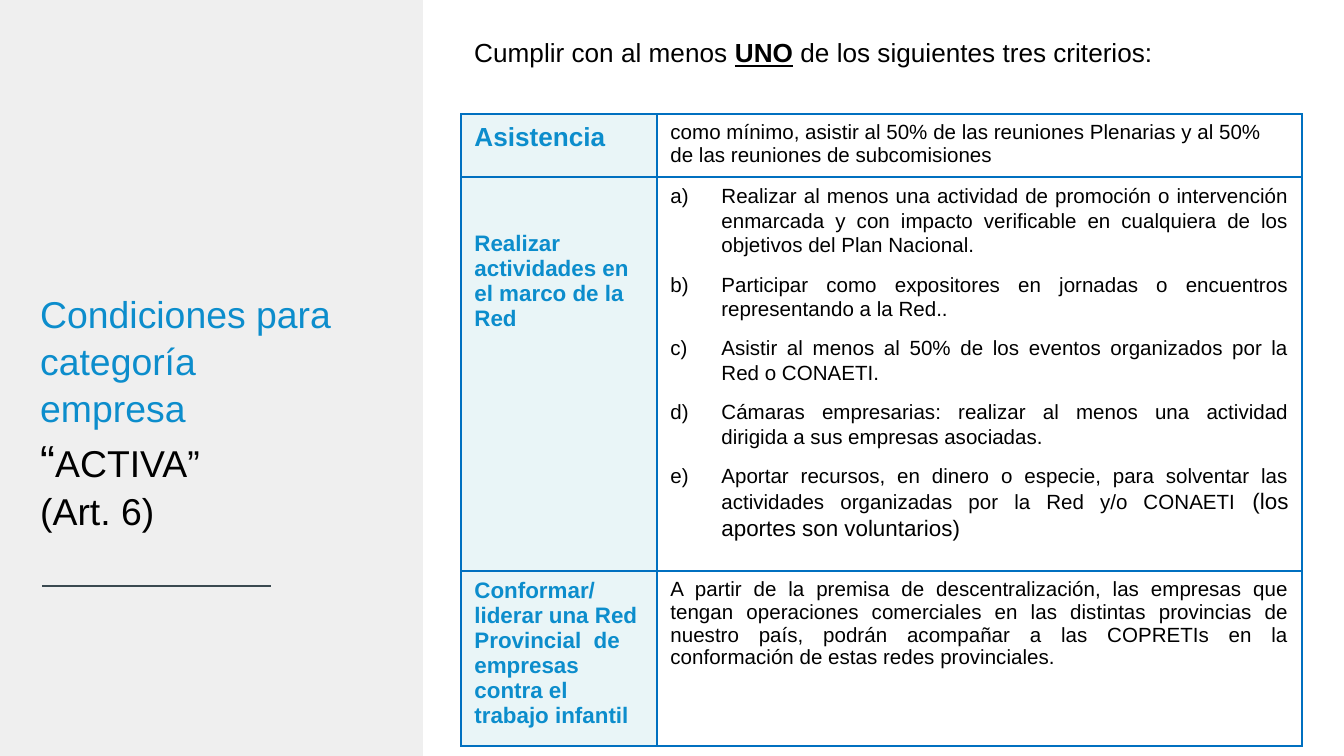
from lxml import etree
from pptx import Presentation
from pptx import util as u
from pptx.dml.color import RGBColor
from pptx.enum import shapes, text
from pptx.oxml.ns import qn

SCALE = 914400 / 134.4
W, H = 1344, 756
SIDE_W = 423
FONT = "Arial"
BLUE, BLACK, GRAY, SLATE = "0C8DCC", "000000", "EFEFEF", "3A4950"
PALE, WHITE, BORDER = "E9F5F7", "FFFFFF", "0070C0"
COLS = (196, 645)
ROWS = (63, 394, 175)
LABEL_TOP = 54

TITLE = [
    [("Condiciones para categoría empresa", 20, BLUE)],
    [("“", 24, BLACK), ("ACTIVA”", 20, BLACK)],
    [("(Art. 6)", 20, BLACK)],
]
LABELS = [
    ("Asistencia", 14),
    ("Realizar actividades en el marco de la Red", 12),
    ("Conformar/ liderar una Red Provincial  de empresas contra el trabajo infantil", 12),
]
ATTENDANCE = ("como mínimo, asistir al 50% de las reuniones Plenarias "
              "y al 50% de las reuniones de subcomisiones")
ACTIVITIES = [
    "Realizar al menos una actividad de promoción o intervención enmarcada "
    "y con impacto verificable en cualquiera de los objetivos del Plan Nacional.",
    "Participar como expositores en jornadas o encuentros representando a la Red..",
    "Asistir al menos al 50% de los eventos organizados por la Red o CONAETI.",
    "Cámaras empresarias: realizar al menos una actividad dirigida a sus empresas asociadas.",
    "Aportar recursos, en dinero o especie, para solventar las actividades "
    "organizadas por la Red y/o CONAETI",
]
VOLUNTARY = " (los aportes son voluntarios)"
NETWORKS = ("A partir de la premisa de descentralización, las empresas que tengan "
            "operaciones comerciales en las distintas provincias de nuestro país, podrán "
            "acompañar a las COPRETIs en la conformación de estas redes provinciales.")


def px(n):
    return u.Emu(round(n * SCALE))


def color(value):
    return RGBColor.from_string(value)


def style(font, size, value=BLACK, bold=False):
    font.name, font.size, font.bold = FONT, u.Pt(size), bold
    font.color.rgb = color(value)


def add_run(p, content):
    r = p.add_run()
    r.text = content
    return r


def next_paragraph(tf, i):
    return tf.add_paragraph() if i else tf.paragraphs[0]


def justify(p):
    p.alignment = text.PP_ALIGN.JUSTIFY


def loosen(p):
    p.line_spacing = 1.07
    p.space_after = u.Pt(8)


def add_text_frame(s, x, y, w, h):
    tf = s.shapes.add_textbox(px(x), px(y), px(w), px(h)).text_frame
    tf.word_wrap = True
    return tf


def add_side_panel(s, x, y, w, h):
    sp = s.shapes.add_shape(shapes.MSO_SHAPE.RECTANGLE, px(x), px(y), px(w), px(h))
    sp.shadow.inherit = False
    sp.fill.solid()
    sp.fill.fore_color.rgb = color(GRAY)
    sp.line.fill.background()

    tf = add_text_frame(s, x + 27, y + 282, w - 94, 304)
    for i, parts in enumerate(TITLE):
        p = next_paragraph(tf, i)
        p.line_spacing = 1.05
        for content, size, value in parts:
            style(add_run(p, content).font, size, value)

    rule = s.shapes.add_connector(shapes.MSO_CONNECTOR.STRAIGHT,
                                  px(x + 271), px(y + 586), px(x + 42), px(y + 586))
    rule.line.color.rgb = color(SLATE)
    rule.line.width = u.Pt(0.75)
    etree.SubElement(rule._element.spPr, qn("a:effectLst"))


def add_heading(s, x, y, w, h):
    p = add_text_frame(s, x, y, w, h).paragraphs[0]
    justify(p)
    loosen(p)
    style(p.font, 14)
    add_run(p, "Cumplir con al menos ")
    r = add_run(p, "UNO")
    r.font.bold = r.font.underline = True
    add_run(p, " de los siguientes tres criterios:")


def set_borders(cell):
    tc_pr = cell._tc.get_or_add_tcPr()
    for i, side in enumerate(("lnL", "lnR", "lnT", "lnB")):
        ln = etree.Element(qn(f"a:{side}"), w=str(u.Pt(1)))
        fill = etree.SubElement(ln, qn("a:solidFill"))
        etree.SubElement(fill, qn("a:srgbClr"), val=BORDER)
        tc_pr.insert(i, ln)


def add_letter(p):
    p_pr = p._p.get_or_add_pPr()
    p_pr.set("marL", str(px(51)))
    p_pr.set("indent", str(px(-51)))
    bullet_color = etree.SubElement(p_pr, qn("a:buClr"))
    etree.SubElement(bullet_color, qn("a:srgbClr"), val=BLACK)
    etree.SubElement(p_pr, qn("a:buFont"), typeface=FONT)
    etree.SubElement(p_pr, qn("a:buAutoNum"), type="alphaLcParenR")


def fill_activities(tf):
    for i, content in enumerate(ACTIVITIES):
        p = next_paragraph(tf, i)
        justify(p)
        loosen(p)
        add_letter(p)
        style(p.font, 11)
        add_run(p, content)
    add_run(p, VOLUNTARY).font.size = u.Pt(12)


def fill_cell(cell, content, size, value=BLACK, bold=False):
    p = cell.text_frame.paragraphs[0]
    p.text = content
    style(p.font, size, value, bold)
    return p


def add_criteria_table(s, x, y, w, h):
    table = s.shapes.add_table(len(ROWS), len(COLS), px(x), px(y), px(w), px(h)).table
    for column, width in zip(table.columns, COLS):
        column.width = px(width)
    for row, height in zip(table.rows, ROWS):
        row.height = px(height)
        for cell, fill in zip(row.cells, (PALE, WHITE)):
            cell.fill.solid()
            cell.fill.fore_color.rgb = color(fill)
            set_borders(cell)

    for i, (label, size) in enumerate(LABELS):
        fill_cell(table.cell(i, 0), label, size, BLUE, True)
    loosen(table.cell(0, 0).text_frame.paragraphs[0])
    table.cell(1, 0).margin_top = px(LABEL_TOP)

    fill_cell(table.cell(0, 1), ATTENDANCE, 11)
    fill_activities(table.cell(1, 1).text_frame)
    justify(fill_cell(table.cell(2, 1), NETWORKS, 11))


def main():
    prs = Presentation()
    prs.slide_width, prs.slide_height = px(W), px(H)
    s = prs.slides.add_slide(prs.slide_layouts[6])
    add_side_panel(s, 0, 0, SIDE_W, H)
    add_criteria_table(s, 461, 114, sum(COLS), sum(ROWS))
    add_heading(s, 461, 28, 824, 44)
    prs.save("out.pptx")


if __name__ == "__main__":
    main()
